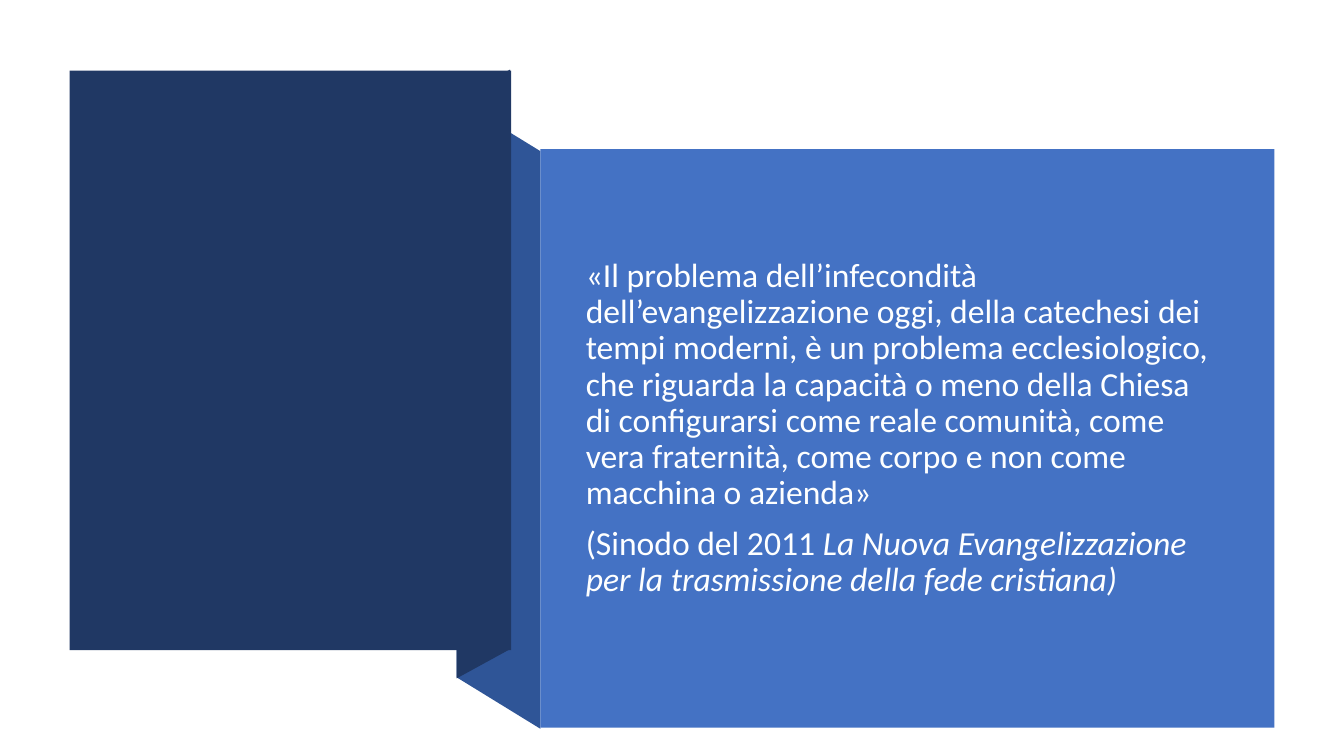
from pptx import Presentation
from pptx.dml.color import RGBColor
from pptx.enum.shapes import MSO_SHAPE as Shape
from pptx.enum.text import MSO_ANCHOR as Anchor, MSO_AUTO_SIZE as Fit, PP_ALIGN as Align
from pptx.oxml.ns import qn
from pptx.util import Inches, Pt
from lxml import etree

NAVY = RGBColor(0x20, 0x38, 0x64)
FOLD = RGBColor(0x2F, 0x55, 0x97)
BLUE = RGBColor(0x44, 0x72, 0xC4)
WHITE = RGBColor(0xFE, 0xFF, 0xFF)

QUOTE = [
    [("«Il problema dell’infecondità dell’evangelizzazione oggi, della catechesi "
      "dei tempi moderni, è un problema ecclesiologico, che riguarda la capacità "
      "o meno della Chiesa di configurarsi come reale comunità, come vera "
      "fraternità, come corpo e non come macchina o azienda»", False)],
    [("(Sinodo del 2011 ", False),
     ("La Nuova Evangelizzazione per la trasmissione della fede cristiana)", True)],
]


def paint(shape, color):
    shape.shadow.inherit = False
    shape.fill.solid()
    shape.fill.fore_color.rgb = color
    shape.line.fill.background()


def add_fold(slide, points, color):
    start, *rest = [(Inches(x), Inches(y)) for x, y in points]
    pen = slide.shapes.build_freeform(*start)
    pen.add_line_segments(rest, close=True)
    paint(pen.convert_to_shape(), color)


def add_panel(slide, box, color):
    panel = slide.shapes.add_shape(Shape.RECTANGLE, *map(Inches, box))
    paint(panel, color)


def fill_body(body, box, paras):
    body.left, body.top, body.width, body.height = map(Inches, box)
    frame = body.text_frame
    frame.word_wrap = True
    frame.auto_size = Fit.NONE
    frame.vertical_anchor = Anchor.MIDDLE
    for i, parts in enumerate(paras):
        para = frame.add_paragraph() if i else frame.paragraphs[0]
        para.alignment = Align.LEFT
        para.line_spacing = 0.9
        para.space_before = Pt(10)
        # No bullet, no hanging indent
        props = para._p.get_or_add_pPr()
        props.set("marL", "0")
        props.set("indent", "0")
        etree.SubElement(props, qn("a:buNone"))
        for text, slant in parts:
            run = para.add_run()
            run.text = text
            font = run.font
            font.name, font.size, font.italic = "Calibri", Pt(24), slant
            font.color.rgb = WHITE


def main():
    deck = Presentation()
    deck.slide_width, deck.slide_height = Inches(13.33), Inches(7.5)
    slide = deck.slides.add_slide(deck.slide_layouts[1])
    title, body = slide.placeholders
    tree = title.element.getparent()
    tree.remove(title.element)

    # Folded ribbon behind the two panels
    add_fold(slide, [(5.36, 7.23), (4.53, 6.72), (4.53, 0.99), (5.36, 1.5)], FOLD)
    add_fold(slide, [(5.06, 6.44), (4.53, 6.73), (4.53, 0.98), (5.06, 0.69)], NAVY)

    # Panels
    add_panel(slide, (0.69, 0.7, 4.38, 5.75), NAVY)
    add_panel(slide, (5.36, 1.48, 7.28, 5.74), BLUE)

    # Quotation, brought to the front
    fill_body(body, (5.71, 1.88, 6.51, 4.74), QUOTE)
    tree.append(body.element)

    deck.save("out.pptx")


if __name__ == "__main__":
    main()
